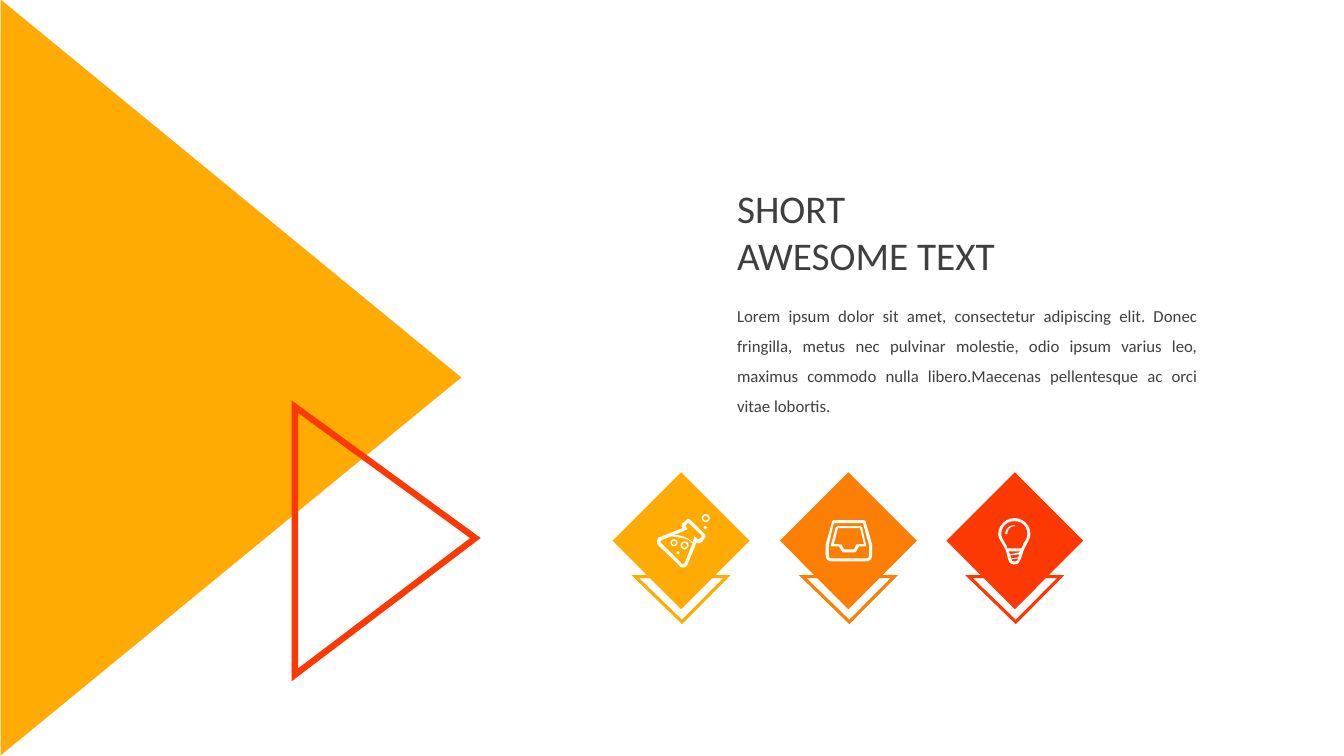
from lxml import etree
from pptx import Presentation
from pptx.dml.color import RGBColor
from pptx.enum.shapes import MSO_SHAPE
from pptx.enum.text import MSO_ANCHOR, MSO_AUTO_SIZE, PP_ALIGN
from pptx.oxml.ns import qn
from pptx.util import Inches, Pt

TRIANGLE, SQUARE = MSO_SHAPE.ISOSCELES_TRIANGLE, MSO_SHAPE.RECTANGLE
CIRCLE, RING = MSO_SHAPE.OVAL, MSO_SHAPE.DONUT
COLORS = {"amber": "FFAB03", "orange": "FC7F03", "red": "FC3903",
          "white": "FFFFFF", "text": "3F3F3F"}
CURVE_STEPS = 6


def paint(shape, fill=None, line=None, width=2.25):
    """Set fill and outline by colour name; None leaves that part empty."""
    shape.shadow.inherit = False
    if fill:
        shape.fill.solid()
        shape.fill.fore_color.rgb = RGBColor.from_string(COLORS[fill])
    else:
        shape.fill.background()
    if line:
        shape.line.color.rgb = RGBColor.from_string(COLORS[line])
        shape.line.width = Pt(width)
        outline = shape.line._get_or_add_ln()
        etree.SubElement(outline, qn("a:miter"), lim="800000")
    else:
        shape.line.fill.background()


def draw_outline(shapes, left, top, contours):
    """Draw white contours in hundredths of an inch.

    A pair is a corner; six numbers are a cubic curve from the last point.
    """
    builder = None
    for contour in contours:
        points = [contour[0]]
        for step in contour[1:]:
            if len(step) == 2:
                points.append(step)
                continue
            start, nodes = points[-1], (step[:2], step[2:4], step[4:])
            for i in range(1, CURVE_STEPS + 1):
                t = i / CURVE_STEPS
                weights = (3 * t * (1 - t) ** 2, 3 * t * t * (1 - t), t ** 3)
                points.append(tuple(
                    start[axis] * (1 - t) ** 3
                    + sum(w * node[axis] for w, node in zip(weights, nodes))
                    for axis in (0, 1)))
        points = [(Inches(left + x / 100), Inches(top + y / 100)) for x, y in points]
        if builder is None:
            builder = shapes.build_freeform(*points[0])
        else:
            builder.move_to(*points[0])
        builder.add_line_segments(points[1:], close=True)
    paint(builder.convert_to_shape(), fill="white")


deck = Presentation()
deck.slide_width, deck.slide_height = Inches(13.33), Inches(7.5)
page = deck.slides.add_slide(deck.slide_layouts[1])

# Title and body text
title, body = page.shapes.title, page.placeholders[1]
text_blocks = [
    (title, (7.21, 1.78, 3.8, 1.04), ["SHORT", "AWESOME TEXT"], 28, PP_ALIGN.LEFT, 1.0),
    (body, (7.21, 2.88, 4.77, 1.31),
     ["Lorem ipsum dolor sit amet, consectetur adipiscing elit. Donec fringilla, "
      "metus nec pulvinar molestie, odio ipsum varius leo, maximus commodo nulla "
      "libero.Maecenas pellentesque ac orci vitae lobortis."],
     12, PP_ALIGN.JUSTIFY, 1.5),
]
for box, place, lines, size, alignment, spacing in text_blocks:
    box.left, box.top, box.width, box.height = map(Inches, place)
    frame = box.text_frame
    frame.text = "\n".join(lines)
    frame.word_wrap = True
    frame.auto_size = MSO_AUTO_SIZE.NONE
    frame.vertical_anchor = MSO_ANCHOR.TOP
    for para in frame.paragraphs:
        para.alignment = alignment
        para.line_spacing = spacing
        para.space_before = Pt(0)
        para.font.name = "Calibri"
        para.font.size = Pt(size)
        para.font.color.rgb = RGBColor.from_string(COLORS["text"])
        properties = para._p.get_or_add_pPr()
        properties.set("marL", "0")
        properties.set("indent", "0")
        bullet = etree.Element(qn("a:buNone"))
        properties.find(qn("a:defRPr")).addprevious(bullet)

# Diamond badges, each with a chevron tip behind it
for left, color in ((6.29, "amber"), (7.95, "orange"), (9.6, "red")):
    badge = page.shapes.add_group_shape().shapes
    tip = badge.add_shape(TRIANGLE, Inches(left + 0.01), Inches(5.72), Inches(0.91), Inches(0.45))
    tip.rotation = 180
    tip.adjustments[0] = 0.49
    paint(tip, line=color)
    diamond = badge.add_shape(SQUARE, Inches(left), Inches(4.9), Inches(0.93), Inches(0.93))
    diamond.rotation = 45
    paint(diamond, fill=color, line=color)

# Icon contours: outer edge first, then the cut-outs
bulb = [
    [(16, 0), (8, 0, 0, 7, 0, 16), (0, 21, 6, 27, 8, 33), (10, 41, 10, 46, 16, 46),
     (22, 46, 22, 41, 25, 33), (27, 27, 32, 21, 32, 16), (32, 7, 25, 0, 16, 0)],
    [(20, 39), (13, 40), (12, 37), (21, 36)],
    [(12, 36), (10, 33), (22, 33), (21, 34)],
    [(16, 43), (15, 43, 14, 43, 13, 41), (20, 40), (19, 43, 18, 43, 16, 43)],
    [(23, 30), (9, 30), (9, 28, 8, 27, 7, 25), (5, 22, 3, 18, 3, 16), (3, 8, 9, 3, 16, 3),
     (24, 3, 29, 8, 29, 16), (29, 18, 28, 22, 25, 25), (25, 27, 24, 28, 23, 30)],
]
bulb_glint = [
    [(16, 7), (11, 7, 7, 11, 7, 16), (9, 16), (9, 12, 12, 8, 16, 8), (17, 8), (16, 7)],
]
flask = [
    [(35, 7), (34, 6, 33, 5, 32, 5), (31, 5, 29, 6, 29, 7), (26, 9), (26, 9, 25, 11, 25, 12),
     (25, 13, 26, 13, 26, 14), (3, 23), (2, 23, 1, 25, 1, 26), (0, 28, 1, 30, 2, 31),
     (23, 51), (24, 53, 25, 53, 26, 53), (27, 53), (29, 53, 31, 51, 31, 50), (40, 28),
     (40, 28, 41, 29, 42, 29), (43, 29, 44, 28, 45, 28), (47, 25),
     (48, 24, 49, 23, 49, 22), (49, 21, 48, 20, 47, 19)],
    [(28, 49), (27, 50), (26, 50), (25, 49), (4, 28), (4, 27), (5, 26), (15, 22),
     (22, 24, 29, 22, 36, 29)],
    [(45, 23), (42, 25), (41, 25), (38, 22), (36, 28), (31, 23, 26, 22, 22, 21), (17, 21),
     (31, 15), (29, 12), (29, 11), (31, 9), (32, 9), (45, 21)],
]
tray = [
    [(46, 24), (40, 3), (40, 1, 39, 0, 37, 0), (8, 0), (7, 0, 6, 1, 6, 3), (0, 24), (0, 35),
     (0, 38, 2, 41, 6, 41), (40, 41), (44, 41, 46, 38, 46, 35)],
    [(43, 35), (43, 37, 42, 38, 40, 38), (6, 38), (4, 38, 3, 37, 3, 35), (3, 25), (8, 3),
     (37, 3), (43, 25)],
]
tray_inset = [
    [(34, 6), (12, 6), (10, 7), (5, 25), (5, 26), (13, 26), (16, 31), (16, 32, 17, 32, 18, 32),
     (28, 32), (29, 32, 30, 32, 30, 31), (33, 26), (40, 26), (40, 25), (36, 7),
     (35, 7, 35, 6, 34, 6)],
    [(35, 24), (33, 24), (31, 24, 30, 24, 30, 25), (28, 29), (18, 29), (16, 25),
     (16, 24, 14, 24, 13, 24), (8, 24), (12, 8), (34, 8), (38, 24)],
]
bubbles = [(RING, 6.75, 5.37, 0.08), (RING, 6.96, 5.1, 0.08), (RING, 6.65, 5.35, 0.07),
           (CIRCLE, 6.71, 5.47, 0.03), (CIRCLE, 6.98, 5.22, 0.03)]

# White icons on the badges
icons = [(9.9, 5.14, (bulb, bulb_glint), []),
         (6.51, 5.1, (flask,), bubbles),
         (8.19, 5.16, (tray, tray_inset), [])]
for left, top, outlines, dots in icons:
    icon = page.shapes.add_group_shape().shapes
    for contours in outlines:
        draw_outline(icon, left, top, contours)
    for kind, dot_left, dot_top, size in dots:
        dot = icon.add_shape(kind, Inches(dot_left), Inches(dot_top), Inches(size), Inches(size))
        if kind == RING:
            dot.adjustments[0] = 0.2
        paint(dot, fill="white")

# Large triangles on the left
backdrop = page.shapes.add_shape(TRIANGLE, Inches(-1.46), Inches(1.46), Inches(7.5), Inches(4.57))
backdrop.rotation = 90
paint(backdrop, fill="amber")
accent = page.shapes.add_shape(TRIANGLE, Inches(2.49), Inches(4.47), Inches(2.66), Inches(1.79))
accent.rotation = 90
accent.adjustments[0] = 0.49
paint(accent, line="red", width=4.5)

deck.save("out.pptx")
